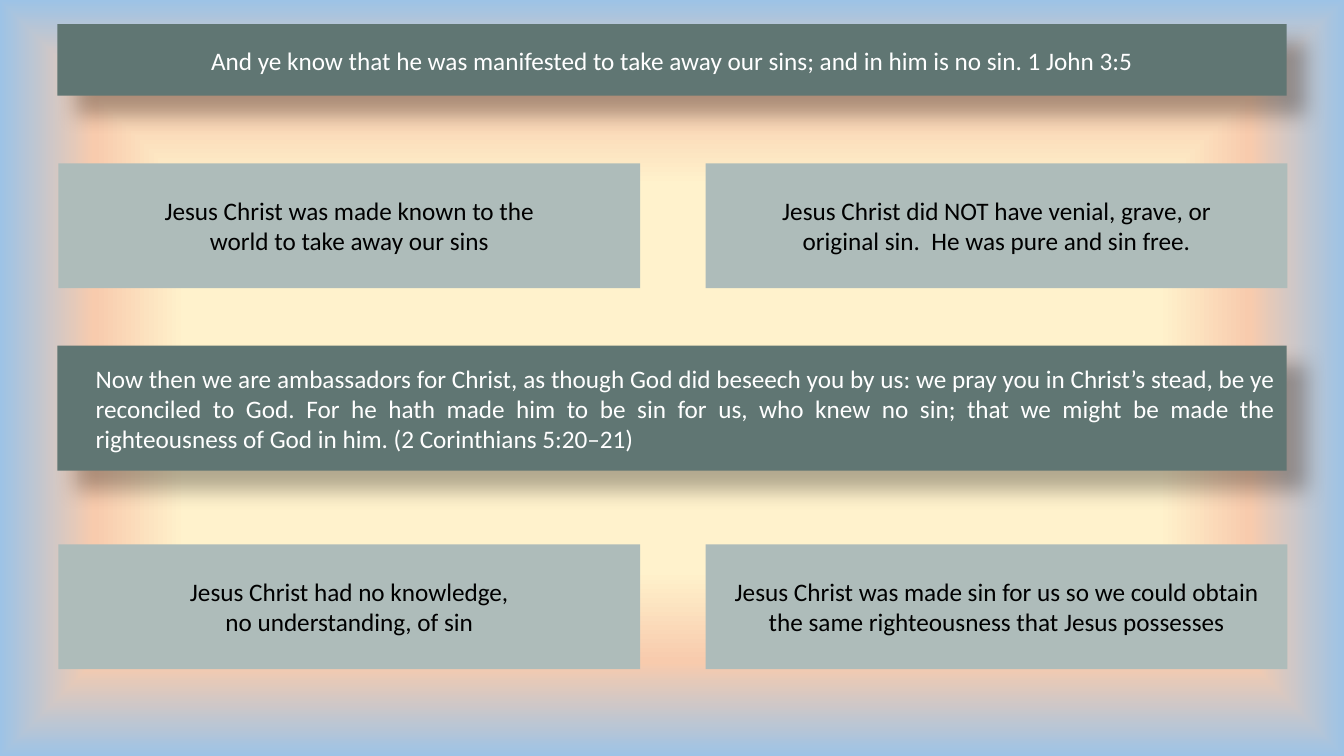
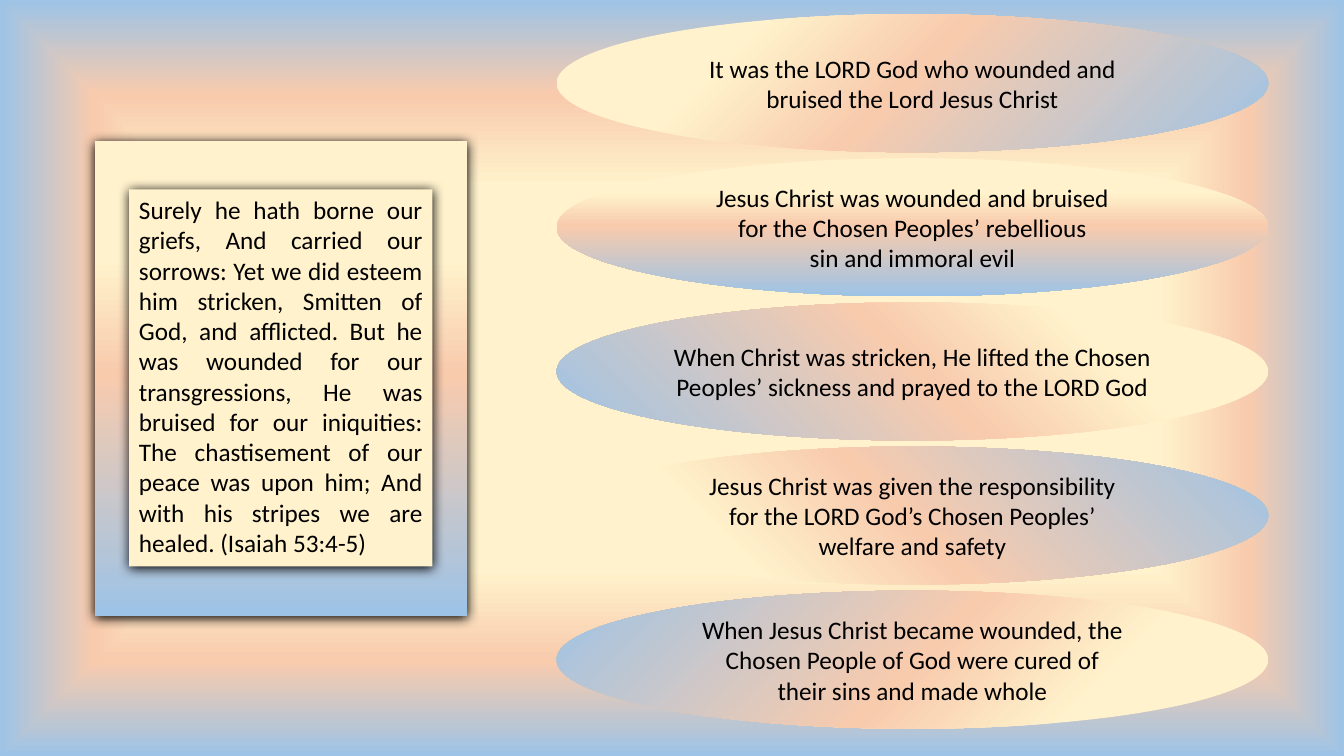
from lxml.etree import SubElement
from pptx import Presentation
from pptx.dml.color import RGBColor
from pptx.enum.shapes import MSO_SHAPE
from pptx.enum.text import MSO_ANCHOR, MSO_AUTO_SIZE, PP_ALIGN
from pptx.oxml.ns import qn
from pptx.util import Inches, Pt

WHITE = RGBColor(0xFF, 0xFF, 0xFF)
BLACK = RGBColor(0x00, 0x00, 0x00)
PINE = RGBColor(0x60, 0x76, 0x73)
SAGE = RGBColor(0xAE, 0xBC, 0xBA)
CREAM = RGBColor(0xFF, 0xF2, 0xCC)
PEACH = RGBColor(0xF8, 0xCB, 0xAD)
SKY = RGBColor(0x9D, 0xC3, 0xE6)

FONT = "Calibri"
PAGE_STOPS = ((51, CREAM), (75, PEACH), (100, SKY))
SHAPE_STOPS = ((25, CREAM), (49, PEACH), (100, SKY))
BAND_SHADOW = (30, 15, 18, 45)
FRAME_SHADOW = (100, 8.5, 1, 90)

OPENING_VERSE = (
    "And ye know that he was manifested to take away our sins; "
    "and in him is no sin. 1 John 3:5"
)
AMBASSADOR_VERSE = (
    "Now then we are ambassadors for Christ, as though God did beseech you by us: "
    "we pray you in Christ’s stead, be ye reconciled to God. For he hath made him "
    "to be sin for us, who knew no sin; that we might be made the righteousness "
    "of God in him. (2 Corinthians 5:20–21)"
)
ISAIAH_VERSE = (
    "Surely he hath borne our griefs, And carried our sorrows: Yet we did esteem "
    "him stricken, Smitten of God, and afflicted. But he was wounded for our "
    "transgressions, He was bruised for our iniquities: The chastisement of our "
    "peace was upon him; And with his stripes we are healed. (Isaiah 53:4-5)"
)
CARD_ROWS = (
    (1.62, (
        "Jesus Christ was made known to the\nworld to take away our sins",
        "Jesus Christ did NOT have venial, grave, or\n"
        "original sin.  He was pure and sin free.",
    )),
    (5.4, (
        "Jesus Christ had no knowledge,\nno understanding, of sin",
        "Jesus Christ was made sin for us so we could obtain "
        "the same righteousness that Jesus possesses",
    )),
)
OVALS = (
    (45, "It was the LORD God who wounded and bruised the Lord Jesus Christ"),
    (90, "Jesus Christ was wounded and bruised\n"
         "for the Chosen Peoples’ rebellious\nsin and immoral evil"),
    (135, "When Christ was stricken, He lifted the Chosen Peoples’ sickness "
          "and prayed to the LORD God"),
    (315, "Jesus Christ was given the responsibility\n"
          "for the LORD God’s Chosen Peoples’\nwelfare and safety"),
    (225, "When Jesus Christ became wounded, the Chosen People of God were cured of\n"
          "their sins and made whole"),
)


def add_node(parent, tag, **attributes):
    return SubElement(parent, qn(tag), {key: str(value) for key, value in attributes.items()})


def set_gradient(fill, element, stops, angle=None):
    fill.gradient()
    gradient = element.xpath(".//a:gradFill")[0]
    gradient.clear()
    gradient.set("rotWithShape", "1")
    stop_list = add_node(gradient, "a:gsLst")
    for position, color in stops:
        stop = add_node(stop_list, "a:gs", pos=position * 1000)
        add_node(stop, "a:srgbClr", val=color)
    if angle is None:
        center = add_node(gradient, "a:path", path="rect")
        add_node(center, "a:fillToRect", l=50000, t=50000, r=50000, b=50000)
    else:
        add_node(gradient, "a:lin", ang=angle * 60000, scaled=0)


def set_shadow(shape, opacity, blur, distance, angle):
    effects = shape.element.xpath("./p:spPr/a:effectLst")[0]
    shadow = add_node(effects, "a:outerShdw", blurRad=Pt(blur), dist=Pt(distance),
                      dir=angle * 60000, algn="ctr", rotWithShape=0)
    color = add_node(shadow, "a:srgbClr", val=BLACK)
    add_node(color, "a:alpha", val=opacity * 1000)


def add_box(page, box, color=None, kind=MSO_SHAPE.RECTANGLE, angle=None, shadow=None):
    shape = page.shapes.add_shape(kind, *map(Inches, box))
    shape.shadow.inherit = False
    shape.line.fill.background()
    if angle is None:
        shape.fill.solid()
        shape.fill.fore_color.rgb = color
    else:
        set_gradient(shape.fill, shape.element, SHAPE_STOPS, angle)
    if shadow:
        set_shadow(shape, *shadow)
    return shape


def write(shape, text, color=BLACK, align=PP_ALIGN.CENTER, anchor=MSO_ANCHOR.MIDDLE):
    frame = shape.text_frame
    frame.word_wrap = True
    frame.vertical_anchor = anchor
    frame.text = text
    for para in frame.paragraphs:
        para.alignment = align
        para.font.name = FONT
        para.font.size = Pt(18)
        para.font.color.rgb = color


def write_verse(shape, text, color=BLACK):
    write(shape, text, color, PP_ALIGN.JUSTIFY, MSO_ANCHOR.TOP)
    shape.text_frame.auto_size = MSO_AUTO_SIZE.SHAPE_TO_FIT_TEXT


def add_card_row(page, box, texts):
    left, top, width, height = box
    gap = 0.65
    card_width = (width - gap) / 2
    for column, text in enumerate(texts):
        card_left = left + column * (card_width + gap)
        write(add_box(page, (card_left, top, card_width, height), SAGE), text)


def add_verse_band(page, box):
    left, top, width, height = box
    add_box(page, box, PINE, shadow=BAND_SHADOW)
    verse_box = (left + 0.28, top + 0.12, width - 0.29, height - 0.23)
    write_verse(page.shapes.add_textbox(*map(Inches, verse_box)), AMBASSADOR_VERSE, WHITE)


def add_framed_verse(page, box):
    left, top, width, height = box
    add_box(page, box, angle=90, shadow=FRAME_SHADOW)
    panel_box = (left + 0.34, top + 0.48, width - 0.68, height - 0.97)
    write_verse(add_box(page, panel_box, CREAM, shadow=FRAME_SHADOW), ISAIAH_VERSE)


def add_oval_stack(page, box):
    left, top, width, height = box
    gap = 0.06
    oval_height = (height - gap * (len(OVALS) - 1)) / len(OVALS)
    for row, (angle, text) in enumerate(OVALS):
        oval_box = (left, top + row * (oval_height + gap), width, oval_height)
        write(add_box(page, oval_box, kind=MSO_SHAPE.OVAL, angle=angle), text)


def build_sinless_page(page):
    write(add_box(page, (0.57, 0.24, 12.19, 0.71), PINE, shadow=BAND_SHADOW),
          OPENING_VERSE, WHITE)
    for top, texts in CARD_ROWS:
        add_card_row(page, (0.58, top, 12.19, 1.24), texts)
    add_verse_band(page, (0.57, 3.43, 12.19, 1.24))


def build_wounded_page(page):
    add_framed_verse(page, (0.94, 1.4, 3.69, 4.71))
    add_oval_stack(page, (5.52, 0.14, 7.06, 7.09))


def main():
    deck = Presentation()
    deck.slide_width = Inches(13.33)
    deck.slide_height = Inches(7.5)
    master = deck.slide_master
    set_gradient(master.background.fill, master.element, PAGE_STOPS)
    blank = deck.slide_layouts.get_by_name("Blank")
    for build in (build_sinless_page, build_wounded_page):
        build(deck.slides.add_slide(blank))
    deck.save("out.pptx")


if __name__ == "__main__":
    main()
